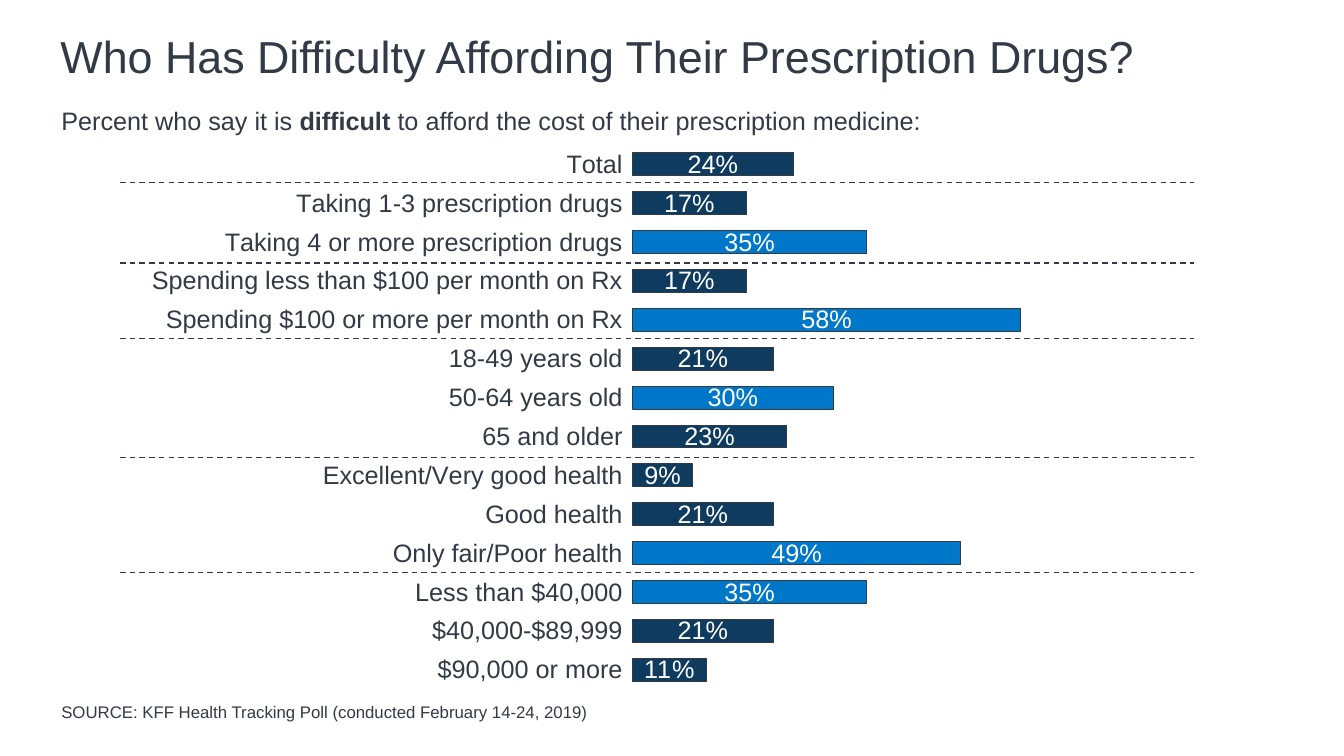
from dataclasses import dataclass

from lxml import etree
from pptx import Presentation
from pptx.chart.data import CategoryChartData
from pptx.dml.color import RGBColor
from pptx.enum.chart import XL_CHART_TYPE as ChartType
from pptx.enum.chart import XL_LABEL_POSITION as LabelPos
from pptx.enum.chart import XL_TICK_MARK as TickMark
from pptx.enum.dml import MSO_LINE as Dash
from pptx.enum.shapes import MSO_CONNECTOR as Connector
from pptx.enum.text import MSO_ANCHOR as Anchor
from pptx.enum.text import PP_ALIGN as Align
from pptx.oxml.ns import qn
from pptx.util import Inches, Pt


@dataclass(frozen=True)
class Theme:
    font: str = "Arial"
    text: RGBColor = RGBColor(0x32, 0x3A, 0x45)
    bar: RGBColor = RGBColor(0x0E, 0x3B, 0x5E)
    highlight: RGBColor = RGBColor(0x00, 0x77, 0xC8)
    white: RGBColor = RGBColor(0xFF, 0xFF, 0xFF)
    title_size: int = 32
    body_size: int = 18
    source_size: int = 12


@dataclass(frozen=True)
class Box:
    left: float
    top: float
    width: float
    height: float


@dataclass(frozen=True)
class Run:
    text: str
    bold: bool = False


@dataclass(frozen=True)
class Group:
    label: str
    share: float
    highlighted: bool = False


THEME = Theme()
GROUPS = [
    Group("Total", 0.24),
    Group("Taking 1-3 prescription drugs", 0.17),
    Group("Taking 4 or more prescription drugs", 0.35, True),
    Group("Spending less than $100 per month on Rx", 0.17),
    Group("Spending $100 or more per month on Rx", 0.58, True),
    Group("18-49 years old", 0.21),
    Group("50-64 years old", 0.30, True),
    Group("65 and older", 0.23),
    Group("Excellent/Very good health", 0.09),
    Group("Good health", 0.21),
    Group("Only fair/Poor health", 0.49, True),
    Group("Less than $40,000", 0.35, True),
    Group("$40,000-$89,999", 0.21),
    Group("$90,000 or more", 0.11),
]
DIVIDER_TOPS = [1.81, 2.61, 3.36, 4.54, 5.68]
DIVIDER_LEFT, DIVIDER_RIGHT = 1.19, 11.84
PLOT = {"x": 0.424, "y": 0.016, "w": 0.542, "h": 0.982}


def style_font(font, size: int, color: RGBColor, bold: bool = False) -> None:
    font.name = THEME.font
    font.size = Pt(size)
    font.bold = bold
    font.color.rgb = color


def write_text(sp, box: Box, runs: list[Run], size: int) -> None:
    sp.left, sp.top = Inches(box.left), Inches(box.top)
    sp.width, sp.height = Inches(box.width), Inches(box.height)
    tf = sp.text_frame
    tf.word_wrap = True
    tf.vertical_anchor = Anchor.MIDDLE
    p = tf.paragraphs[0]
    p.alignment = Align.LEFT
    for run in runs:
        r = p.add_run()
        r.text = run.text
        style_font(r.font, size, THEME.text, run.bold)


def add_text(s, box: Box, runs: list[Run], size: int) -> None:
    sp = s.shapes.add_textbox(0, 0, 0, 0)
    write_text(sp, box, runs, size)


def place_plot(chart) -> None:
    plot_area = chart._chartSpace.chart.plotArea
    for old in plot_area.findall(qn("c:layout")):
        plot_area.remove(old)
    layout = etree.Element(qn("c:layout"))
    manual = etree.SubElement(layout, qn("c:manualLayout"))
    settings = {"layoutTarget": "inner", "xMode": "edge", "yMode": "edge", **PLOT}
    for tag, value in settings.items():
        etree.SubElement(manual, qn(f"c:{tag}")).set("val", str(value))
    plot_area.insert(0, layout)


def add_bars(s, box: Box) -> None:
    data = CategoryChartData(number_format="0%")
    data.categories = [group.label for group in GROUPS]
    data.add_series("Series 1", [group.share for group in GROUPS])
    chart = s.shapes.add_chart(
        ChartType.BAR_STACKED, Inches(box.left), Inches(box.top),
        Inches(box.width), Inches(box.height), data,
    ).chart
    chart.has_title = False
    chart.has_legend = False
    style_font(chart.font, THEME.body_size, THEME.text)

    cat_axis = chart.category_axis
    cat_axis.reverse_order = True
    cat_axis.major_tick_mark = TickMark.OUTSIDE
    cat_axis.format.line.fill.background()
    style_font(cat_axis.tick_labels.font, THEME.body_size, THEME.text)
    val_axis = chart.value_axis
    val_axis.minimum_scale, val_axis.maximum_scale = 0, 1
    val_axis.major_unit = 0.1
    val_axis.has_major_gridlines = False
    val_axis.visible = False

    plot = chart.plots[0]
    plot.gap_width, plot.overlap = 70, 100
    plot.vary_by_categories = False
    series = plot.series[0]
    for target, color in [(series, THEME.bar)] + [
        (series.points[i], THEME.highlight)
        for i, group in enumerate(GROUPS) if group.highlighted
    ]:
        target.format.fill.solid()
        target.format.fill.fore_color.rgb = color
        target.format.line.color.rgb = THEME.text
        target.format.line.width = Pt(0.75)

    labels = series.data_labels
    labels.show_value = True
    labels.position = LabelPos.CENTER
    labels.number_format = "0%"
    labels.number_format_is_linked = False
    style_font(labels.font, THEME.body_size, THEME.white)
    place_plot(chart)


def add_divider(s, top: float) -> None:
    line = s.shapes.add_connector(
        Connector.STRAIGHT, Inches(DIVIDER_LEFT), Inches(top),
        Inches(DIVIDER_RIGHT), Inches(top),
    )
    line.line.color.rgb = THEME.text
    line.line.width = Pt(1)
    line.line.dash_style = Dash.DASH
    etree.SubElement(line._element.spPr, qn("a:effectLst"))


def main() -> None:
    prs = Presentation()
    prs.slide_width, prs.slide_height = Inches(13.33), Inches(7.5)
    s = prs.slides.add_slide(prs.slide_layouts[5])
    write_text(
        s.shapes.title, Box(0.5, 0.22, 11.83, 0.66),
        [Run("Who Has Difficulty Affording Their Prescription Drugs?")],
        THEME.title_size,
    )
    add_text(
        s, Box(0.51, 6.9, 7.8, 0.32),
        [Run("SOURCE: KFF Health Tracking Poll (conducted February 14-24, 2019)")],
        THEME.source_size,
    )
    add_text(
        s, Box(0.51, 0.99, 10.91, 0.4),
        [
            Run("Percent who say it is "),
            Run("difficult ", bold=True),
            Run("to afford the cost of their prescription medicine:"),
        ],
        THEME.body_size,
    )
    add_bars(s, Box(1.08, 1.35, 12.25, 5.5))
    for top in DIVIDER_TOPS:
        add_divider(s, top)
    prs.save("out.pptx")


if __name__ == "__main__":
    main()
